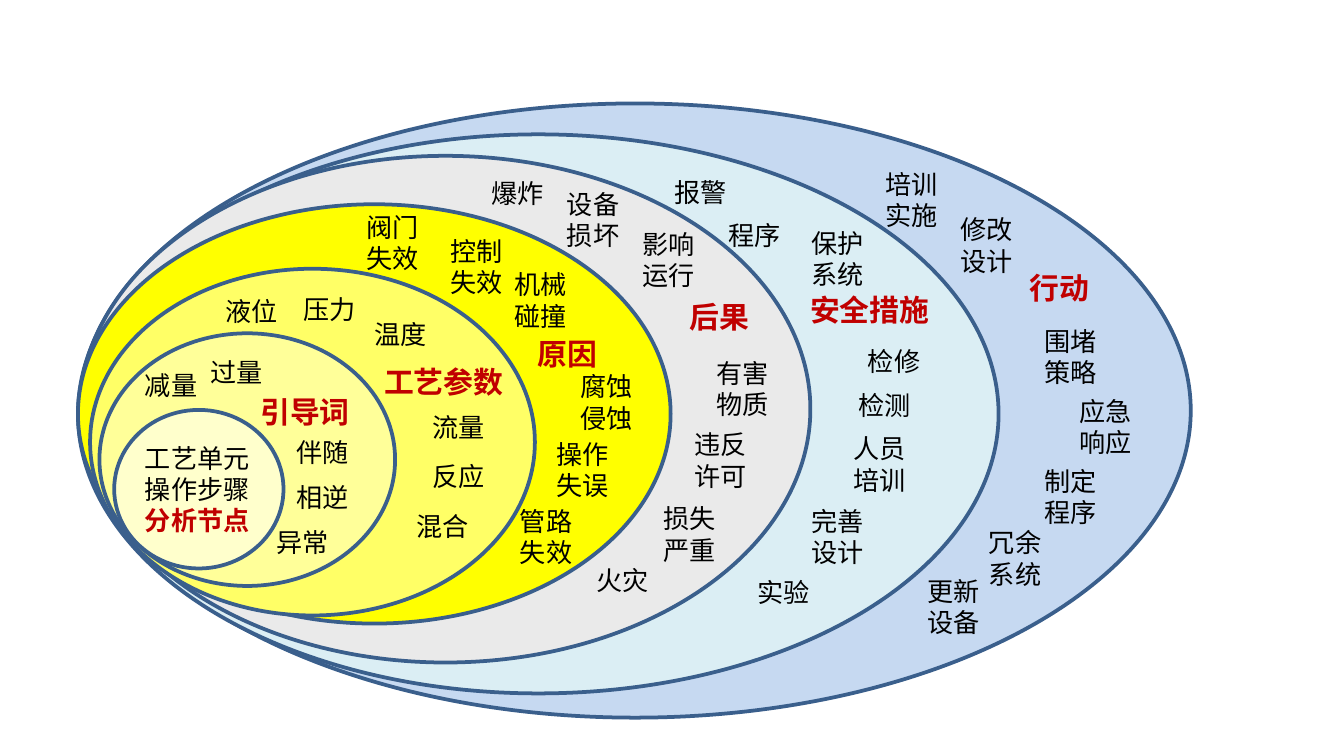
from lxml.etree import SubElement
from pptx import Presentation
from pptx.dml.color import RGBColor as Rgb
from pptx.enum.shapes import MSO_SHAPE as Shape
from pptx.enum.text import PP_ALIGN as Align
from pptx.oxml.ns import qn
from pptx.util import Inches, Pt

FONT = "Noto Sans CJK SC"
COLORS = {
    "line": "3A5F8C", "text": "000000", "head": "C00000",
    "action": "C6D9F1", "safety": "DBEEF4", "effect": "EAEAEA",
    "cause": "FFFF00", "param": "FFFF66", "guide": "FFFF99", "node": "FFFFCC",
}
LEADING = 1.2
PAD = 0.1
ITEM_W = 0.62

# Outermost first: colour, oval box, heading (text, left, top, width),
# then the items (text, left, top)
RINGS = [
    ("action", (0.59, 0.77, 8.27, 4.57), ("行动", 7.5, 1.96, 0.77), [
        ("培训实施", 6.49, 1.2), ("修改设计", 7.05, 1.54),
        ("围堵策略", 7.67, 2.37), ("应急响应", 7.93, 2.89),
        ("制定程序", 7.67, 3.41), ("冗余系统", 7.26, 3.87),
        ("更新设备", 6.8, 4.23)]),
    ("safety", (0.58, 1, 6.85, 4.16), ("安全措施", 5.93, 2.12, 1.18), [
        ("报警", 4.92, 1.26), ("程序", 5.32, 1.58), ("保护系统", 5.94, 1.64),
        ("检修", 6.36, 2.52), ("检测", 6.29, 2.85), ("人员培训", 6.25, 3.17),
        ("实验", 5.54, 4.24), ("完善设计", 5.94, 3.71)]),
    ("effect", (0.6, 1.16, 5.43, 3.77), ("后果", 4.99, 2.17, 0.73), [
        ("爆炸", 3.56, 1.27), ("设备损坏", 4.12, 1.35),
        ("影响运行", 4.68, 1.65), ("有害物质", 5.23, 2.61),
        ("违反许可", 5.07, 3.14), ("损失严重", 4.84, 3.69),
        ("火灾", 4.34, 4.15)]),
    ("cause", (0.58, 1.52, 4.41, 3.12), ("原因", 3.79, 2.45, 0.86), [
        ("操作失误", 4.04, 3.21), ("管路失效", 3.77, 3.71),
        ("腐蚀侵蚀", 4.22, 2.71), ("机械碰撞", 3.73, 1.95),
        ("控制失效", 3.25, 1.7), ("阀门失效", 2.63, 1.52)]),
    ("param", (0.67, 2, 3.31, 2.58), ("工艺参数", 2.76, 2.66, 1.18), [
        ("混合", 3, 3.75), ("反应", 3.12, 3.38), ("流量", 3.12, 3.01),
        ("温度", 2.69, 2.32), ("压力", 2.16, 2.13), ("液位", 1.58, 2.15)]),
    ("guide", (0.74, 2.48, 2.2, 1.88), ("引导词", 1.84, 2.88, 1.1), [
        ("过量", 1.47, 2.6), ("减量", 0.98, 2.7), ("伴随", 2.11, 3.2),
        ("相逆", 2.11, 3.53), ("异常", 1.96, 3.87)]),
]
CORE = ("node", (0.85, 3.05, 1.26, 1.18))
CORE_TEXT = ("工艺单元操作步骤\n分析节点", 0.98, 3.24, 0.99)


def add_oval(shapes, color, box):
    oval = shapes.add_shape(Shape.OVAL, *map(Inches, box))
    oval.shadow.inherit = False
    oval.fill.solid()
    oval.fill.fore_color.rgb = Rgb.from_string(COLORS[color])
    oval.line.color.rgb = Rgb.from_string(COLORS["line"])
    oval.line.width = Pt(2)


def style(para, size, head):
    para.line_spacing = Pt(size * LEADING)
    for run in para.runs:
        font = run.font
        font.size, font.bold, font.name = Pt(size), head, FONT
        font.color.rgb = Rgb.from_string(COLORS["head" if head else "text"])
        SubElement(font._element, qn("a:ea"), typeface=FONT)


def add_text(shapes, text, left, top, width, lines, size=14):
    height = lines * size * LEADING / 72 + PAD
    box = shapes.add_textbox(*map(Inches, (left, top, width, height)))
    frame = box.text_frame
    frame.word_wrap = True
    frame.margin_left = frame.margin_right = Inches(PAD)
    frame.margin_top = frame.margin_bottom = Inches(PAD / 2)
    frame.text = text
    return frame.paragraphs


def add_ring(slide, color, oval, head, items):
    shapes = slide.shapes.add_group_shape().shapes
    add_oval(shapes, color, oval)
    para = add_text(shapes, *head, lines=1, size=16)[0]
    style(para, 16, True)
    if len(head[0]) == 2:
        para.alignment = Align.CENTER
    for text, left, top in items:
        # Each line of an item holds two characters
        para = add_text(shapes, text, left, top, ITEM_W, len(text) // 2)[0]
        style(para, 14, False)


def add_core(slide):
    shapes = slide.shapes.add_group_shape().shapes
    add_oval(shapes, *CORE)
    body, head = add_text(shapes, *CORE_TEXT, lines=3)
    style(body, 14, False)
    style(head, 14, True)


def main():
    deck = Presentation()
    deck.slide_width = Inches(10)
    deck.slide_height = deck.slide_width * 9 // 16
    slide = deck.slides.add_slide(deck.slide_layouts[6])
    for ring in RINGS:
        add_ring(slide, *ring)
    add_core(slide)
    deck.save("out.pptx")


if __name__ == "__main__":
    main()
